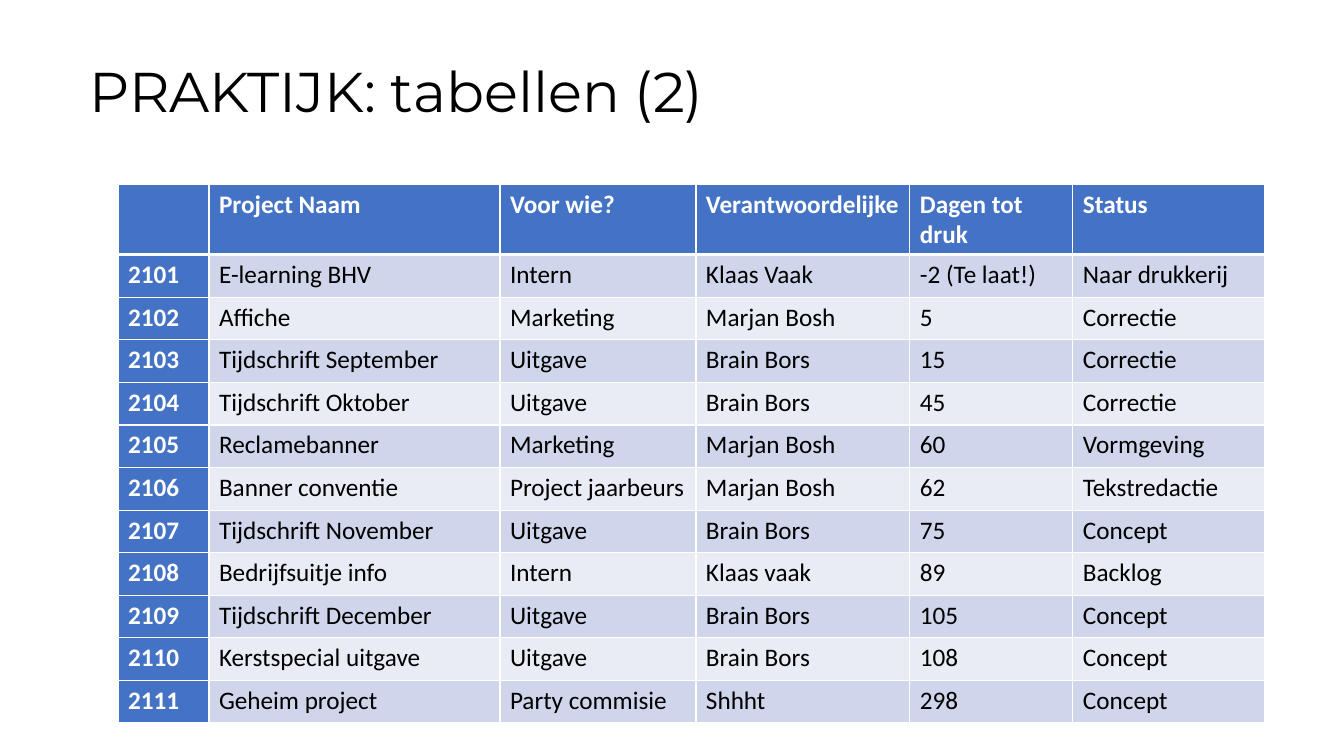
from lxml import etree
from pptx import Presentation, util as u
from pptx.dml.color import RGBColor
from pptx.enum import text
from pptx.oxml import ns

PX = 914400 / 100.8
BLUE, BANDS = "4472C4", ("CFD5EA", "E9EBF5")
WHITE, BLACK = "FFFFFF", "000000"

COLUMN_WIDTHS = [91, 291, 196, 214, 163, 192]
PROJECTS = [
    ["", "Project Naam", "Voor wie?", "Verantwoordelijke", "Dagen tot druk", "Status"],
    ["2101", "E-learning BHV", "Intern", "Klaas Vaak", "-2 (Te laat!)", "Naar drukkerij"],
    ["2102", "Affiche", "Marketing", "Marjan Bosh", "5", "Correctie"],
    ["2103", "Tijdschrift September", "Uitgave", "Brain Bors", "15", "Correctie"],
    ["2104", "Tijdschrift Oktober", "Uitgave", "Brain Bors", "45", "Correctie"],
    ["2105", "Reclamebanner", "Marketing", "Marjan Bosh", "60", "Vormgeving"],
    ["2106", "Banner conventie", "Project jaarbeurs", "Marjan Bosh", "62", "Tekstredactie"],
    ["2107", "Tijdschrift November", "Uitgave", "Brain Bors", "75", "Concept"],
    ["2108", "Bedrijfsuitje info", "Intern", "Klaas vaak", "89", "Backlog"],
    ["2109", "Tijdschrift December", "Uitgave", "Brain Bors", "105", "Concept"],
    ["2110", "Kerstspecial uitgave", "Uitgave", "Brain Bors", "108", "Concept"],
    ["2111", "Geheim project", "Party commisie", "Shhht", "298", "Concept"],
]


def px(n):
    return u.Emu(round(n * PX))


def color(value):
    return RGBColor.from_string(value)


def write(p, content, fill, **font):
    r = p.add_run()
    r.text = content
    for name, value in font.items():
        setattr(r.font, name, value)
    r.font.color.rgb = color(fill)


def add_title(s, content, *box):
    sp = s.shapes.add_textbox(*map(px, box))
    tf = sp.text_frame
    tf.word_wrap = True
    tf.vertical_anchor = text.MSO_ANCHOR.TOP
    p = tf.paragraphs[0]
    p.line_spacing = 0.9
    write(p, content, BLACK, name="Montserrat", size=u.Pt(40))


def add_border(cell, side, points):
    tc_pr = cell._tc.get_or_add_tcPr()
    ln = etree.SubElement(tc_pr, ns.qn(f"a:ln{side}"), w=str(u.Pt(points)))
    solid = etree.SubElement(ln, ns.qn("a:solidFill"))
    etree.SubElement(solid, ns.qn("a:srgbClr"), val=WHITE)


def style_cell(cell, content, row, col):
    # Borders go before the fill; the rule under the header is thicker
    widths = {"L": 1, "R": 1, "T": 3 if row == 1 else 1, "B": 3 if row == 0 else 1}
    for side, points in widths.items():
        add_border(cell, side, points)
    heading = row == 0 or col == 0
    cell.fill.solid()
    cell.fill.fore_color.rgb = color(BLUE if heading else BANDS[(row - 1) % 2])
    if content:
        write(cell.text_frame.paragraphs[0], content, WHITE if heading else BLACK,
              name="Calibri", size=u.Pt(18), bold=heading)


def add_project_table(s, rows, widths, left, top, height):
    frame = s.shapes.add_table(len(rows), len(widths), px(left), px(top),
                               px(sum(widths)), px(height))
    table = frame.table
    table.first_col = True
    for column, width in zip(table.columns, widths):
        column.width = px(width)
    for i, row in enumerate(rows):
        for j, content in enumerate(row):
            style_cell(table.cell(i, j), content, i, j)


def main():
    prs = Presentation()
    prs.slide_width, prs.slide_height = px(1344), px(756)
    s = prs.slides.add_slide(prs.slide_layouts[6])

    # Title
    add_title(s, "PRAKTIJK: tabellen (2)", 80, 59, 1240, 60)

    # Project overview
    add_project_table(s, PROJECTS, COLUMN_WIDTHS, 118, 184, 511)

    prs.save("out.pptx")


if __name__ == "__main__":
    main()
